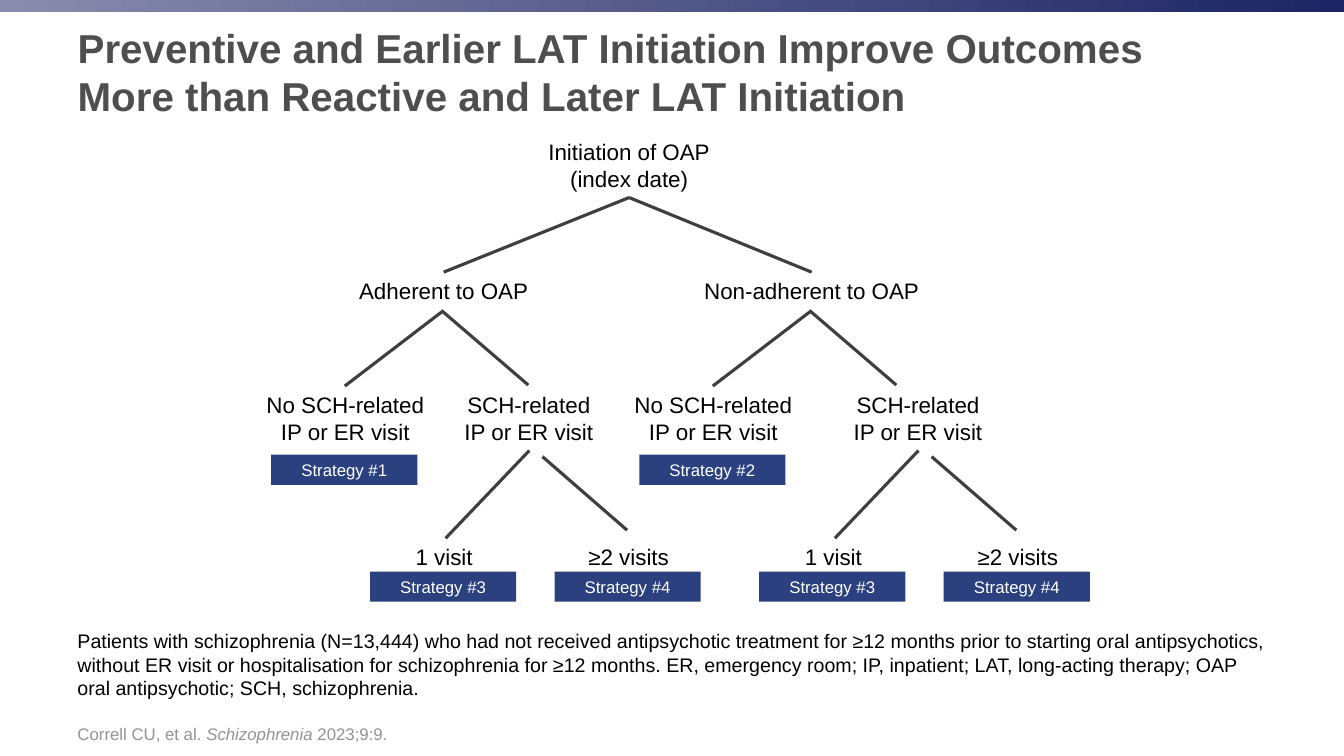
import lxml.etree
import pptx
import pptx.dml.color
import pptx.enum.shapes
import pptx.enum.text
import pptx.oxml.ns
import pptx.util
from dataclasses import dataclass

ALIGN = pptx.enum.text.PP_ALIGN
ANCHOR = pptx.enum.text.MSO_ANCHOR
SHAPE = pptx.enum.shapes.MSO_SHAPE
AUTO = pptx.enum.text.MSO_AUTO_SIZE
qn = pptx.oxml.ns.qn


def px(n):
    return pptx.util.Emu(n * 9144)


def rgb(value):
    return pptx.dml.color.RGBColor.from_string(value)


@dataclass
class Theme:
    font: str = "Arial"
    heading: str = "4D4E4D"
    body: str = "000000"
    muted: str = "939393"
    accent: str = "2B407E"
    on_accent: str = "FFFFFF"
    branch: str = "3F3F3F"
    bar: tuple = ("898CAD", "1C2463")
    title_pt: float = 28.8
    node_pt: int = 16
    note_pt: int = 14
    small_pt: int = 12
    branch_pt: float = 2.25


class TreeSlide:
    """Draws a decision tree slide in one theme."""

    def __init__(self, prs, theme):
        self.theme = theme
        self.s = prs.slides.add_slide(prs.slide_layouts[5])

    def set_text(self, sp, runs, size, color, align=ALIGN.LEFT, anchor=ANCHOR.TOP, wrap=True, bold=False):
        tf = sp.text_frame
        frame = {"word_wrap": wrap, "vertical_anchor": anchor, "auto_size": AUTO.NONE,
                 "margin_left": px(10), "margin_right": px(10),
                 "margin_top": px(5), "margin_bottom": px(5)}
        for name, value in frame.items():
            setattr(tf, name, value)
        p = tf.paragraphs[0]
        p.alignment = align
        for text, italic in runs:
            for i, line in enumerate(text.split("\n")):
                if i:
                    p.add_line_break()
                r = p.add_run()
                r.text = line
                style = {"name": self.theme.font, "size": pptx.util.Pt(size), "bold": bold, "italic": italic}
                for name, value in style.items():
                    setattr(r.font, name, value)
                r.font.color.rgb = rgb(color)
        for br in p._p.findall(qn("a:br")):
            lxml.etree.SubElement(br, qn("a:rPr"), sz=str(size * 100))

    def rect(self, x, y, w, h):
        sp = self.s.shapes.add_shape(SHAPE.RECTANGLE, px(x), px(y), px(w), px(h))
        sp.shadow.inherit = False
        sp.line.fill.background()
        return sp

    def bar(self, w, h):
        fill = self.rect(0, 0, w, h).fill
        fill.gradient()
        fill.gradient_angle = 0
        for stop, color, position in zip(fill.gradient_stops, self.theme.bar, (0, 1)):
            stop.color.rgb = rgb(color)
            stop.position = position

    def title(self, text, x, y, w, h):
        sp = self.s.shapes.title
        for name, value in zip(("left", "top", "width", "height"), (x, y, w, h)):
            setattr(sp, name, px(value))
        self.set_text(sp, [(text, False)], self.theme.title_pt, self.theme.heading,
                      anchor=ANCHOR.MIDDLE, bold=True)

    def text(self, runs, x, y, w, h, size, color, **layout):
        sp = self.s.shapes.add_textbox(px(x), px(y), px(w), px(h))
        self.set_text(sp, runs, size, color, **layout)

    def node(self, text, x, y, w):
        h = 64 if "\n" in text else 37
        self.text([(text, False)], x, y, w, h, self.theme.node_pt, self.theme.body,
                  align=ALIGN.CENTER, wrap=False)

    def tag(self, number, x, y):
        sp = self.rect(x, y, 145, 30)
        sp.fill.solid()
        sp.fill.fore_color.rgb = rgb(self.theme.accent)
        self.set_text(sp, [(f"Strategy #{number}", False)], self.theme.small_pt, self.theme.on_accent,
                      align=ALIGN.CENTER, anchor=ANCHOR.MIDDLE)

    def branch(self, x1, y1, x2, y2):
        c = self.s.shapes.add_connector(pptx.enum.shapes.MSO_CONNECTOR.STRAIGHT,
                                        px(x1), px(y1), px(x2), px(y2))
        c.line.color.rgb = rgb(self.theme.branch)
        c.line.width = pptx.util.Pt(self.theme.branch_pt)
        lxml.etree.SubElement(c._element.spPr, qn("a:effectLst"))


def main():
    prs = pptx.Presentation()
    prs.slide_width, prs.slide_height = px(1333), px(750)
    theme = Theme()
    tree = TreeSlide(prs, theme)
    tree.bar(1333, 12)
    tree.title("Preventive and Earlier LAT Initiation Improve Outcomes "
               "More than Reactive and Later LAT Initiation", 67, 22, 1175, 97)

    tree.node("Initiation of OAP\n(index date)", 533, 132, 182)
    tree.node("Adherent to OAP", 345, 270, 190)
    tree.node("Non-adherent to OAP", 687, 270, 236)
    for number, x in ((1, 253), (2, 618)):
        tree.node("No SCH-related\nIP or ER visit", x, 383, 179)
        tree.tag(number, x + 16, 451)
    for x in (450, 836):
        tree.node("SCH-related\nIP or ER visit", x, 383, 149)
        for number, text, dx in ((3, "1 visit", -83), (4, "≥2 visits", 100)):
            tree.node(text, x + dx + 1, 534, 145)
            tree.tag(number, x + dx, 567)
        tree.branch(x + 75, 447, x - 8, 534)
        tree.branch(x + 88, 453, x + 172, 526)

    for x in (440, 805):
        tree.branch(624, 196, x, 270)
        tree.branch(x, 308, x - 98, 383)
        tree.branch(x - 1, 309, x + 84, 382)

    tree.text([("Patients with schizophrenia (N=13,444) who had not received antipsychotic treatment "
                "for ≥12 months prior to starting oral antipsychotics, without ER visit or "
                "hospitalisation for schizophrenia for ≥12 months. ER, emergency room; IP, inpatient; "
                "LAT, long-acting therapy; OAP oral antipsychotic; SCH, schizophrenia.", False)],
              67, 619, 1200, 87, theme.note_pt, theme.body)
    tree.text([("Correll CU, et al. ", False), ("Schizophrenia", True), (" 2023;9:9.", False)],
              67, 695, 1175, 48, theme.small_pt, theme.muted, anchor=ANCHOR.BOTTOM)
    prs.save("out.pptx")


if __name__ == "__main__":
    main()
